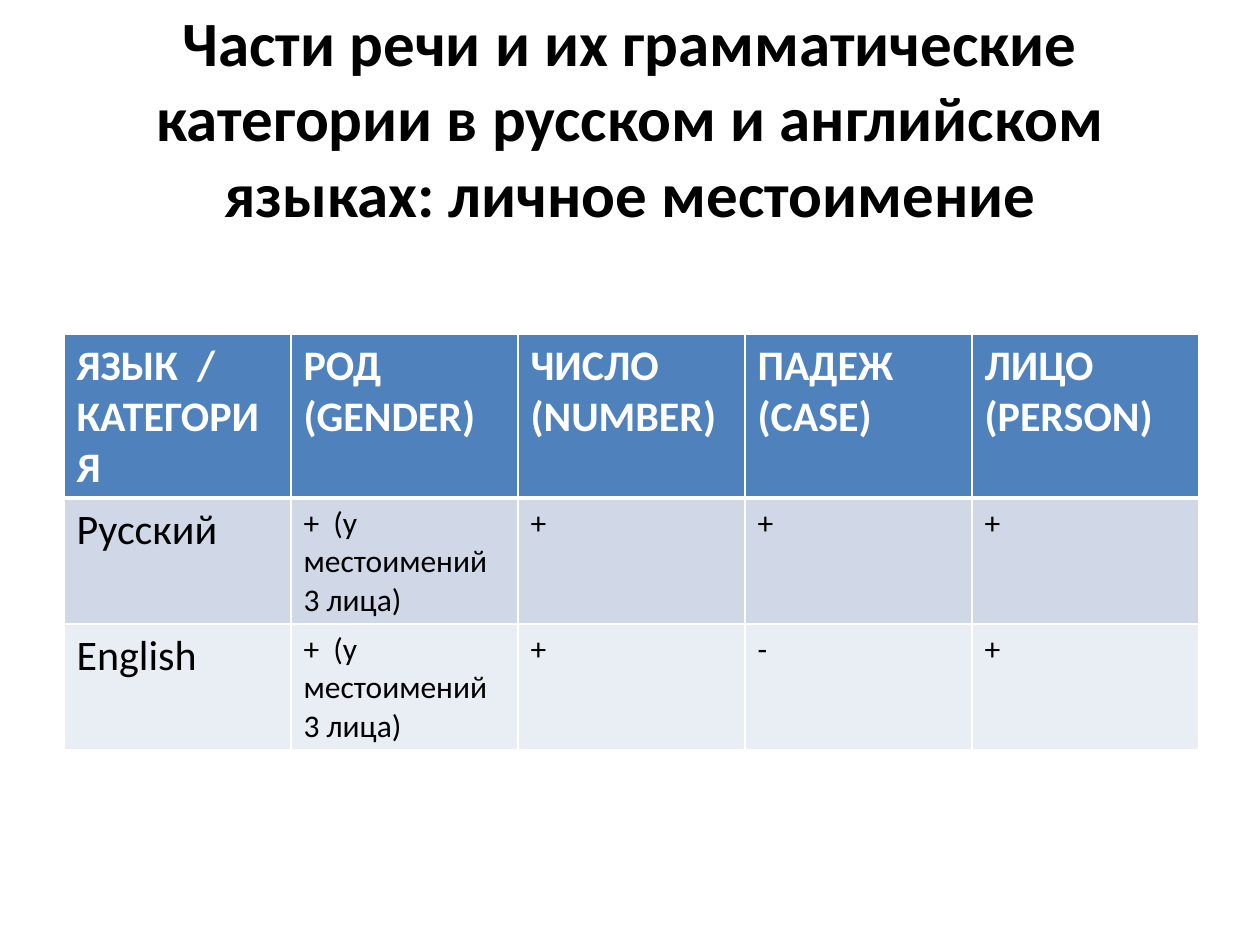
import pptx
import pptx.dml.color
import pptx.enum.text
import pptx.oxml
import pptx.oxml.ns
import pptx.util

SCALE = 914400 / 126
SLIDE_SIZE = (1260, 945)
TITLE = "Части речи и их грамматические категории в русском и английском языках: личное местоимение"
TITLE_BOX = (63, 38, 1134, 157)
TABLE_LEFT, TABLE_TOP = 64, 334
COLUMN_WIDTH, ROW_HEIGHT = 227, 106
GENDER_NOTE = "+  (у местоимений 3 лица)"
CATEGORIES = [
    ["ЯЗЫК  / КАТЕГОРИЯ", "РОД (GENDER)", "ЧИСЛО (NUMBER)", "ПАДЕЖ (CASE)", "ЛИЦО\n(PERSON)"],
    ["Русский", GENDER_NOTE, "+", "+", "+"],
    ["English", GENDER_NOTE, "+", "-", "+"],
]
ROW_FILLS = ["4F81BD", "D0D8E8", "E9EDF4"]
TITLE_FORMAT = {"size": 36, "bold": True, "color": "000000"}
HEADER_FORMAT = {"size": 24, "bold": True, "color": "FFFFFF"}
LANGUAGE_FORMAT = {"size": 24, "bold": False, "color": "000000"}
VALUE_FORMAT = {"size": 18, "bold": False, "color": "000000"}


def px(length):
    return round(length * SCALE)


def paint(color_format, value):
    color_format.rgb = pptx.dml.color.RGBColor.from_string(value)


def write(frame, text, size, bold, color):
    frame.text = text
    font_values = {"name": "Calibri", "size": pptx.util.Pt(size), "bold": bold}
    for paragraph in frame.paragraphs:
        for run in paragraph.runs:
            for attribute, value in font_values.items():
                setattr(run.font, attribute, value)
            paint(run.font.fill.fore_color if run.font.fill.solid() else run.font.color, color)


def add_borders(cell, widths):
    """Draw white borders; widths maps each side (L, R, T, B) to points."""
    properties = cell._tc.get_or_add_tcPr()
    for side, width in widths.items():
        properties.append(pptx.oxml.parse_xml(
            f'<a:ln{side} {pptx.oxml.ns.nsdecls("a")} w="{pptx.util.Pt(width)}">'
            f'<a:solidFill><a:srgbClr val="FFFFFF"/></a:solidFill></a:ln{side}>'))


def add_title(slide):
    frame = slide.shapes.add_textbox(*map(px, TITLE_BOX)).text_frame
    frame.word_wrap = True
    frame.vertical_anchor = pptx.enum.text.MSO_ANCHOR.MIDDLE
    write(frame, TITLE, **TITLE_FORMAT)
    frame.paragraphs[0].alignment = pptx.enum.text.PP_ALIGN.CENTER


def add_categories(slide):
    rows, columns = len(CATEGORIES), len(CATEGORIES[0])
    area = (TABLE_LEFT, TABLE_TOP, columns * COLUMN_WIDTH, rows * ROW_HEIGHT)
    table = slide.shapes.add_table(rows, columns, *map(px, area)).table
    for row, (texts, fill) in enumerate(zip(CATEGORIES, ROW_FILLS)):
        for column, text in enumerate(texts):
            cell = table.cell(row, column)
            if row == 0:
                text_format = HEADER_FORMAT
            else:
                text_format = VALUE_FORMAT if column else LANGUAGE_FORMAT
            write(cell.text_frame, text, **text_format)
            add_borders(cell, {"L": 1, "R": 1, "T": 3 if row == 1 else 1, "B": 3 if row == 0 else 1})
            cell.fill.solid()
            paint(cell.fill.fore_color, fill)


def main():
    presentation = pptx.Presentation()
    presentation.slide_width, presentation.slide_height = map(px, SLIDE_SIZE)
    slide = presentation.slides.add_slide(presentation.slide_layouts[6])
    add_title(slide)
    add_categories(slide)
    presentation.save("out.pptx")


if __name__ == "__main__":
    main()
